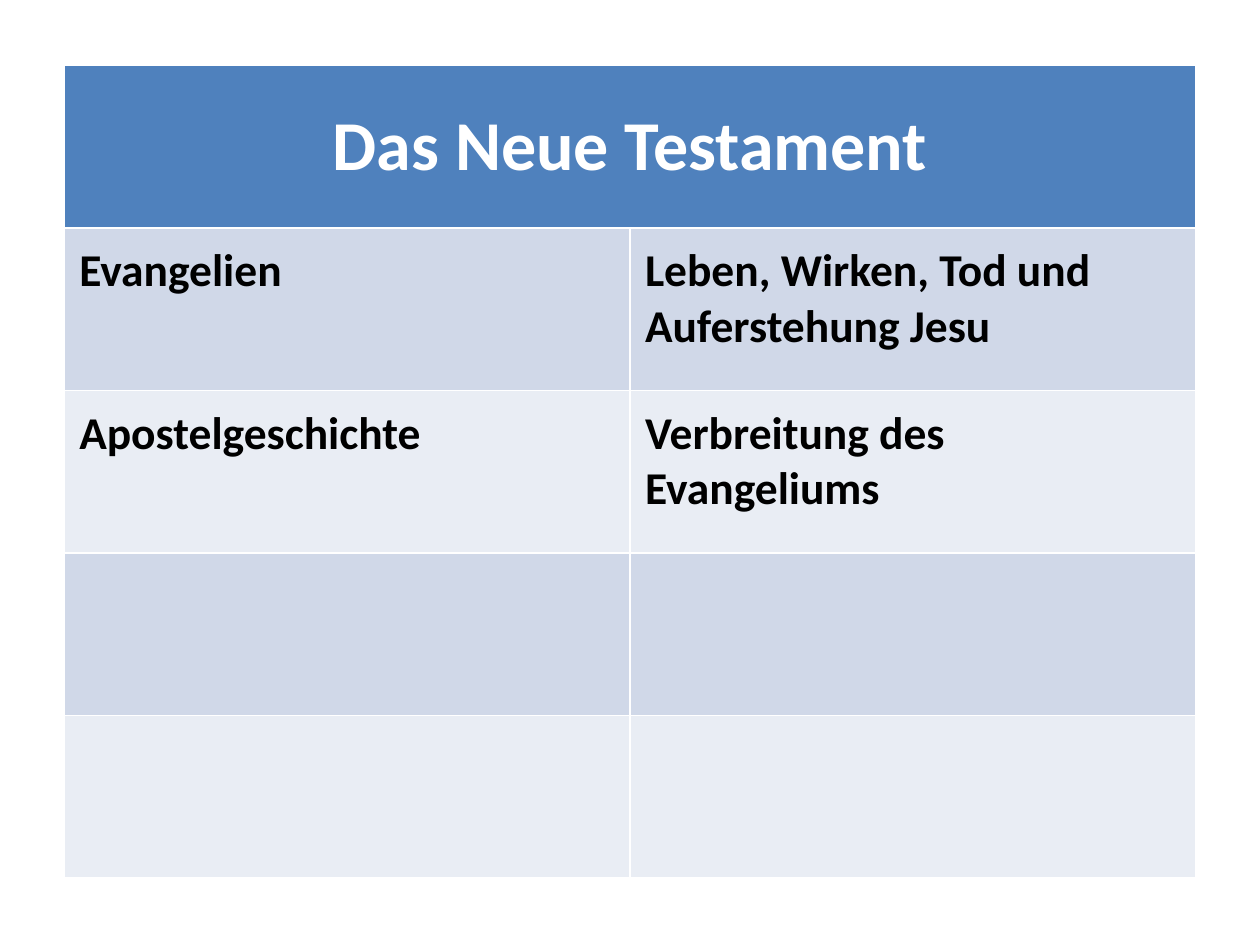
"""Build a slide with a table outlining the New Testament."""
import dataclasses

import pptx
import pptx.dml.color
import pptx.enum.text
import pptx.table
import pptx.util


@dataclasses.dataclass(frozen=True)
class Theme:
    font: str = "Calibri"
    header_fill: str = "4F81BD"
    bands: tuple[str, str] = ("D0D8E8", "E9EDF4")
    header_text: str = "FFFFFF"
    body_text: str = "000000"
    header_size: int = 40
    body_size: int = 26


@dataclasses.dataclass(frozen=True)
class Section:
    name: str = ""
    content: str = ""


THEME = Theme()
WIDTH, HEIGHT = pptx.util.Inches(10), pptx.util.Inches(7.5)
LEFT, TOP = pptx.util.Inches(0.51), pptx.util.Inches(0.52)
COLUMN, ROW = pptx.util.Inches(4.49), pptx.util.Inches(1.29)
SECTIONS = (
    Section("Evangelien", "Leben, Wirken, Tod und Auferstehung Jesu"),
    Section("Apostelgeschichte", "Verbreitung des Evangeliums"),
    Section(),
    Section(),
)


def fill_cell(cell: pptx.table._Cell, color: str) -> None:
    cell.fill.solid()
    cell.fill.fore_color.rgb = pptx.dml.color.RGBColor.from_string(color)


def write_text(cell: pptx.table._Cell, text: str, *, size: int, color: str,
               align: pptx.enum.text.PP_ALIGN = pptx.enum.text.PP_ALIGN.LEFT) -> None:
    para = cell.text_frame.paragraphs[0]
    para.alignment = align
    span = para.add_run()
    span.text = text
    span.font.name = THEME.font
    span.font.size = pptx.util.Pt(size)
    span.font.bold = True
    span.font.color.rgb = pptx.dml.color.RGBColor.from_string(color)


def draw_header(table: pptx.table.Table, text: str) -> None:
    header = table.cell(0, 0)
    header.merge(table.cell(0, 1))
    for cell in table.rows[0].cells:
        fill_cell(cell, THEME.header_fill)
    header.vertical_anchor = pptx.enum.text.MSO_ANCHOR.MIDDLE
    write_text(header, text, size=THEME.header_size, color=THEME.header_text,
               align=pptx.enum.text.PP_ALIGN.CENTER)


def draw_section(table: pptx.table.Table, row: int, section: Section) -> None:
    for column, text in enumerate(dataclasses.astuple(section)):
        cell = table.cell(row, column)
        fill_cell(cell, THEME.bands[(row - 1) % 2])
        if text:
            cell.margin_left = cell.margin_top = pptx.util.Inches(0.12)
            cell.margin_right = pptx.util.Inches(0.16)
            cell.margin_bottom = pptx.util.Inches(0.08)
            write_text(cell, text, size=THEME.body_size, color=THEME.body_text)


def main() -> None:
    deck = pptx.Presentation()
    deck.slide_width, deck.slide_height = WIDTH, HEIGHT
    page = deck.slides.add_slide(deck.slide_layouts[6])
    rows = len(SECTIONS) + 1
    table = page.shapes.add_table(rows, 2, LEFT, TOP, 2 * COLUMN, rows * ROW).table
    draw_header(table, "Das Neue Testament")
    for row, section in enumerate(SECTIONS, start=1):
        draw_section(table, row, section)
    deck.save("out.pptx")


if __name__ == "__main__":
    main()
